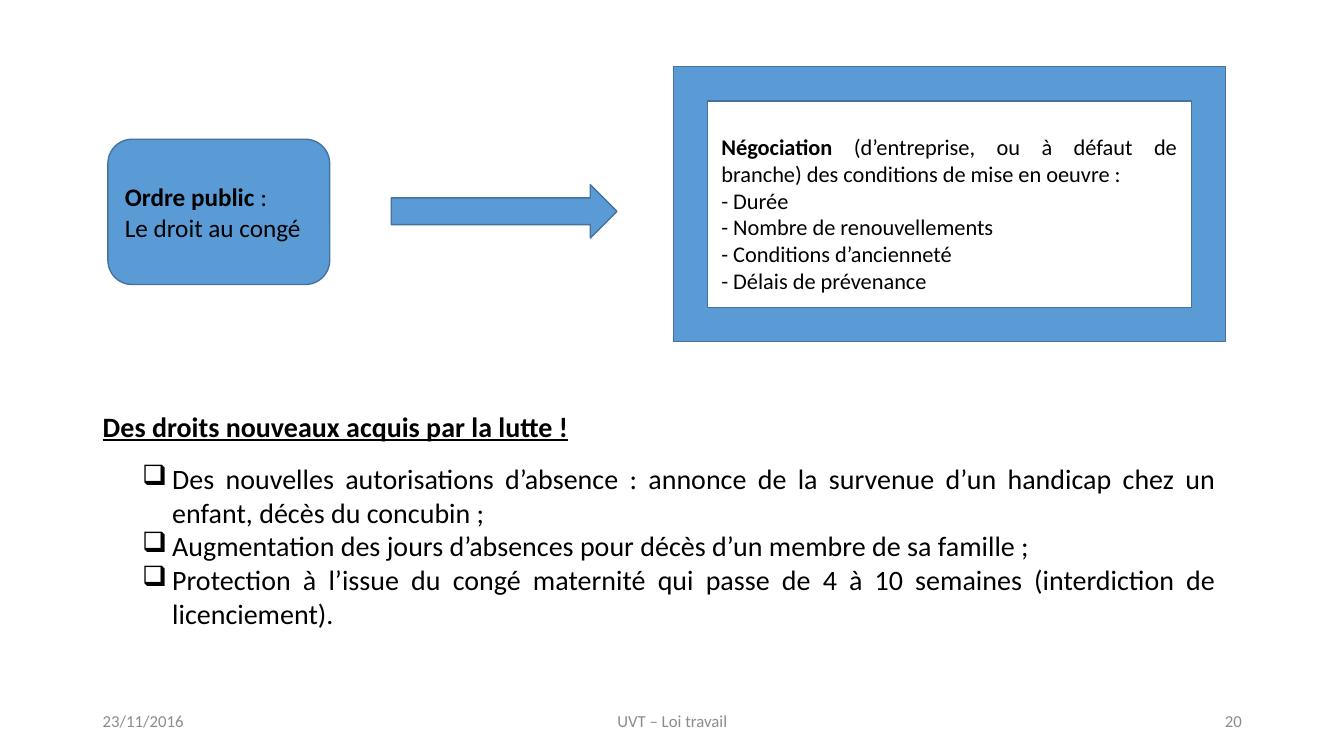
"""Build the slide on leave rights and negotiation."""
from lxml import etree
from pptx import Presentation
from pptx.dml.color import RGBColor
from pptx.enum.shapes import MSO_SHAPE
from pptx.enum.text import MSO_ANCHOR, PP_ALIGN
from pptx.oxml.ns import qn
from pptx.util import Cm, Pt

ROUND, ARROW, FRAME = MSO_SHAPE.ROUNDED_RECTANGLE, MSO_SHAPE.RIGHT_ARROW, MSO_SHAPE.FRAME
LEFT, MID, RIGHT, JUST = PP_ALIGN.LEFT, PP_ALIGN.CENTER, PP_ALIGN.RIGHT, PP_ALIGN.JUSTIFY
TOP, CENTER = MSO_ANCHOR.TOP, MSO_ANCHOR.MIDDLE
BLUE, EDGE, BLACK, GREY = "5B9BD5", "43739E", "000000", "8C8C8C"


def color(code):
    """Turn a hex string into a colour."""
    return RGBColor.from_string(code)


class Deck:
    """Hold the style and the current slide."""

    def __init__(self, font):
        """Open a wide deck with one blank slide."""
        self.font = font
        self.prs = Presentation()
        self.prs.slide_width, self.prs.slide_height = Cm(33.87), Cm(19.05)
        self.slide = self.prs.slides.add_slide(self.prs.slide_layouts[6])

    def shape(self, kind, box):
        """Add a blue shape with a dark edge."""
        shape = self.slide.shapes.add_shape(kind, *map(Cm, box))
        shape.shadow.inherit = False
        shape.fill.solid()
        shape.fill.fore_color.rgb = color(BLUE)
        shape.line.color.rgb = color(EDGE)
        shape.line.width = Pt(1)
        return shape

    def text(self, box, lines, size, **style):
        """Add a text box holding the lines."""
        shape = self.slide.shapes.add_textbox(*map(Cm, box))
        self.label(shape, lines, size, **style)
        return shape

    def label(self, shape, lines, size, align=LEFT, anchor=TOP, ink=BLACK):
        """Fill a shape with lines, each a pair of bold and plain text."""
        frame = shape.text_frame
        frame.word_wrap = True
        frame.vertical_anchor = anchor
        for i, (bold, plain) in enumerate(lines):
            para = frame.add_paragraph() if i else frame.paragraphs[0]
            para.alignment = align
            para.font.name, para.font.size = self.font, Pt(size)
            para.font.color.rgb = color(ink)
            if bold:
                run = para.add_run()
                run.text, run.font.bold = bold, True
            if plain:
                para.add_run().text = plain

    def bullet(self, para, mark, left, hang):
        """Give a paragraph a hanging bullet."""
        props = para._p.get_or_add_pPr()
        props.set("marL", str(Cm(left)))
        props.set("indent", str(-Cm(hang)))
        char = etree.Element(qn("a:buChar"), char=mark)
        props.insert_element_before(char, "a:tabLst", "a:defRPr", "a:extLst")


def main():
    """Draw the slide and save it."""
    deck = Deck("Calibri")

    feet = [
        (2.34, 7.62, "23/11/2016", LEFT),
        (11.23, 11.43, "UVT – Loi travail", MID),
        (23.93, 7.62, "20", RIGHT),
    ]
    for left, width, words, align in feet:
        deck.text((left, 17.65, width, 1.02), [("", words)], 12,
                  align=align, anchor=CENTER, ink=GREY)

    rights = deck.text((2.34, 10.19, 28.55, 5.87), [
        ("Des droits nouveaux acquis par la lutte !", ""),
        ("", "Des nouvelles autorisations d’absence : annonce de la survenue "
             "d’un handicap chez un enfant, décès du concubin ;"),
        ("", "Augmentation des jours d’absences pour décès d’un membre de sa famille ;"),
        ("", "Protection à l’issue du congé maternité qui passe de 4 à 10 semaines "
             "(interdiction de licenciement)."),
    ], 20, align=JUST)
    head, *points = rights.text_frame.paragraphs
    head.font.underline = True
    head.space_after = Pt(13.4)
    for point in points:
        deck.bullet(point, "❑", 1.75, 0.76)

    deck.shape(ARROW, (9.86, 4.65, 5.69, 1.35))
    order = deck.shape(ROUND, (2.72, 3.51, 5.59, 3.66))
    deck.label(order, [("Ordre public ", ":"), ("", "Le droit au congé")], 18, anchor=CENTER)

    deck.shape(FRAME, (16.97, 1.68, 13.92, 6.93))
    terms = deck.text((17.93, 2.79, 11.99, 5.56), [
        ("Négociation ", "(d’entreprise, ou à défaut de branche) "
                         "des conditions de mise en oeuvre :"),
        ("", "- Durée"),
        ("", "- Nombre de renouvellements"),
        ("", "- Conditions d’ancienneté"),
        ("", "- Délais de prévenance"),
    ], 16, align=JUST)
    terms.text_frame.margin_top = Cm(0.56)

    deck.prs.save("out.pptx")


if __name__ == "__main__":
    main()
